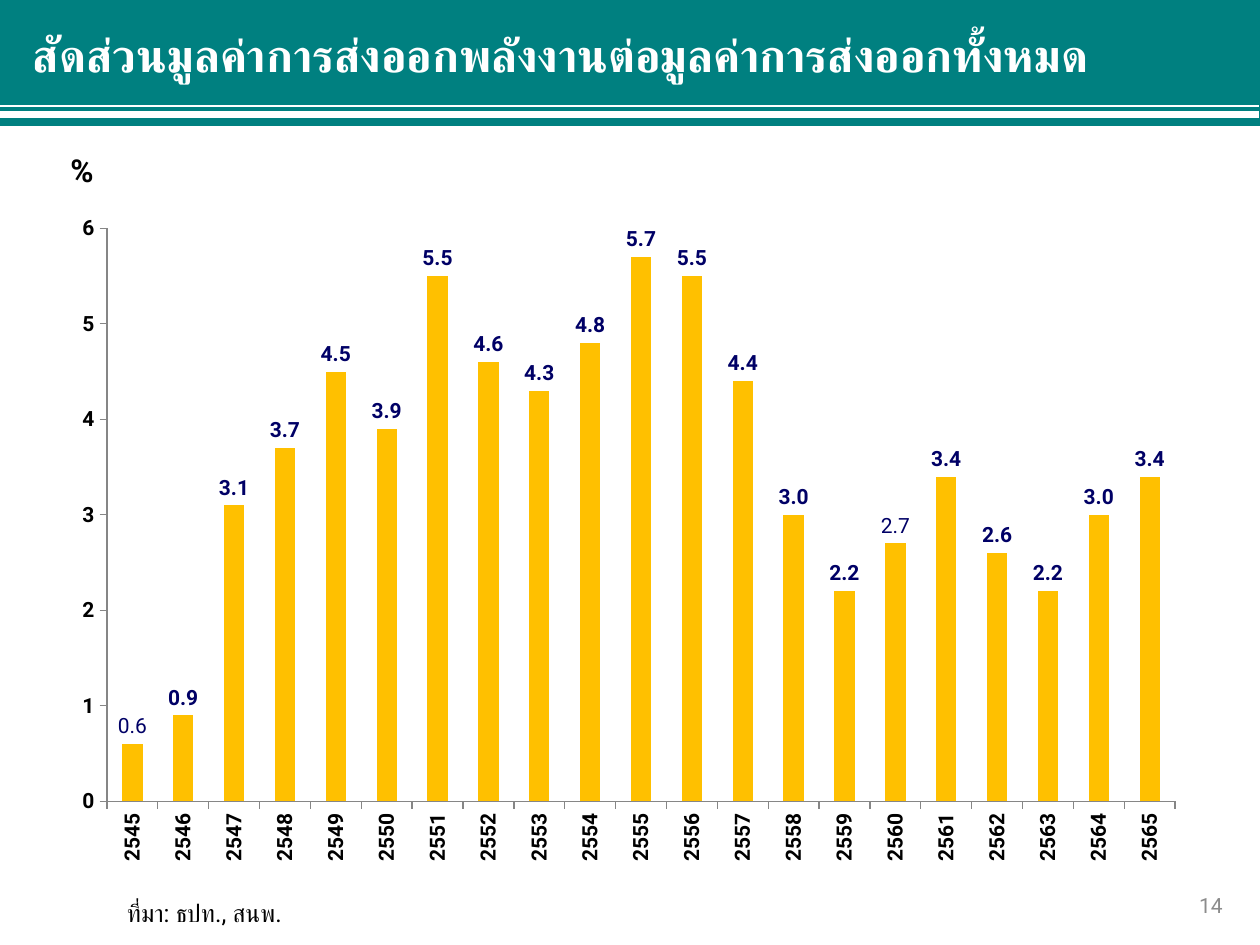
from dataclasses import dataclass

import lxml.etree
import pptx
import pptx.chart.data
import pptx.dml.color
import pptx.enum.chart
import pptx.enum.shapes
import pptx.enum.text
import pptx.oxml.ns
import pptx.util

Cm = pptx.util.Cm
Align = pptx.enum.text.PP_ALIGN
Anchor = pptx.enum.text.MSO_ANCHOR


@dataclass(frozen=True)
class Theme:
    font: str = "Roboto"
    teal: str = "008080"
    white: str = "FFFFFF"
    black: str = "000000"
    navy: str = "000066"
    amber: str = "FFC000"
    grey: str = "8C8C8C"
    axis: str = "868686"
    title_size: int = 26
    unit_size: int = 18
    source_size: int = 14
    small_size: int = 12


@dataclass(frozen=True)
class Frame:
    left: float
    top: float
    width: float
    height: float

    def lengths(self):
        return Cm(self.left), Cm(self.top), Cm(self.width), Cm(self.height)


@dataclass(frozen=True)
class Label:
    text: str
    frame: Frame
    size: int
    color: str
    bold: bool = False
    align: Align = Align.LEFT
    anchor: Anchor = Anchor.TOP
    wrap: bool = True


@dataclass(frozen=True)
class Stripe:
    top: float
    weight: float


THEME = Theme()
FIRST_YEAR = 2545
SHARES = (0.6, 0.9, 3.1, 3.7, 4.5, 3.9, 5.5, 4.6, 4.3, 4.8, 5.7,
          5.5, 4.4, 3.0, 2.2, 2.7, 3.4, 2.6, 2.2, 3.0, 3.4)
LIGHT_LABEL_YEARS = (2545, 2560)
CHART_FRAME = Frame(1.24, 4.06, 22.91, 13.59)
PLOT_LAYOUT = {"x": 0.04, "y": 0.04, "w": 0.94, "h": 0.85}
BANNER = Frame(-0.08, -0.1, 25.48, 2.64)
STRIPES = (Stripe(2.31, 3.75), Stripe(2.13, 1.25))
TITLE = Label("สัดส่วนมูลค่าการส่งออกพลังงานต่อมูลค่าการส่งออกทั้งหมด",
              Frame(0.41, 0.41, 25.2, 1.37), THEME.title_size, THEME.white, bold=True)
LABELS = (
    Label("%", Frame(0.41, 2.92, 2.49, 1.02), THEME.unit_size, THEME.black,
          bold=True, align=Align.CENTER),
    Label("ที่มา: ธปท., สนพ.", Frame(2.31, 17.98, 4.24, 0.86), THEME.source_size,
          THEME.black, wrap=False),
    Label("14", Frame(23.55, 17.78, 1.35, 0.94), THEME.small_size, THEME.grey,
          align=Align.RIGHT, anchor=Anchor.MIDDLE),
)


def rgb(color: str) -> pptx.dml.color.RGBColor:
    return pptx.dml.color.RGBColor.from_string(color)


def style_font(font, size: int, color: str, bold: bool) -> None:
    font.name = THEME.font
    font.size = pptx.util.Pt(size)
    font.bold = bold
    font.color.rgb = rgb(color)


def write_label(box, label: Label) -> None:
    box.left, box.top, box.width, box.height = label.frame.lengths()
    frame = box.text_frame
    frame.text = label.text
    frame.word_wrap = label.wrap
    frame.vertical_anchor = label.anchor
    para = frame.paragraphs[0]
    para.alignment = label.align
    for span in para.runs:
        style_font(span.font, label.size, label.color, label.bold)


def add_stripe(page, stripe: Stripe) -> None:
    line = page.shapes.add_connector(
        pptx.enum.shapes.MSO_CONNECTOR.STRAIGHT,
        Cm(BANNER.left), Cm(stripe.top), Cm(25.37), Cm(stripe.top))
    line.line.color.rgb = rgb(THEME.white)
    line.line.width = pptx.util.Pt(stripe.weight)
    properties = line.element.xpath("p:spPr")[0]
    lxml.etree.SubElement(properties, pptx.oxml.ns.qn("a:effectLst"))


def add_banner(page) -> None:
    banner = page.shapes.add_shape(
        pptx.enum.shapes.MSO_SHAPE.RECTANGLE, *BANNER.lengths())
    banner.shadow.inherit = False
    banner.fill.solid()
    banner.fill.fore_color.rgb = rgb(THEME.teal)
    banner.line.fill.background()
    for stripe in STRIPES:
        add_stripe(page, stripe)


def style_axis(axis) -> None:
    axis.has_major_gridlines = False
    axis.major_tick_mark = pptx.enum.chart.XL_TICK_MARK.OUTSIDE
    axis.minor_tick_mark = pptx.enum.chart.XL_TICK_MARK.NONE
    axis.format.line.color.rgb = rgb(THEME.axis)
    axis.format.line.width = pptx.util.Pt(0.75)
    style_font(axis.tick_labels.font, THEME.small_size, THEME.black, True)


def set_plot_layout(chart) -> None:
    qn = pptx.oxml.ns.qn
    area = chart.element.xpath("c:chart/c:plotArea")[0]
    for old in area.xpath("c:layout"):
        area.remove(old)
    layout = lxml.etree.Element(qn("c:layout"))
    manual = lxml.etree.SubElement(layout, qn("c:manualLayout"))
    settings = {"layoutTarget": "inner", "xMode": "edge", "yMode": "edge", **PLOT_LAYOUT}
    for name, value in settings.items():
        lxml.etree.SubElement(manual, qn(f"c:{name}")).set("val", str(value))
    area.insert(0, layout)


def add_share_chart(page) -> None:
    data = pptx.chart.data.CategoryChartData(number_format="#,##0.0")
    data.categories = [str(FIRST_YEAR + step) for step in range(len(SHARES))]
    data.add_series("Series 1", SHARES)
    chart = page.shapes.add_chart(
        pptx.enum.chart.XL_CHART_TYPE.COLUMN_CLUSTERED, *CHART_FRAME.lengths(), data).chart
    chart.has_legend = False
    chart.has_title = False
    style_font(chart.font, THEME.small_size, THEME.black, False)

    style_axis(chart.category_axis)
    style_axis(chart.value_axis)
    chart.element.xpath(".//c:catAx/c:txPr/a:bodyPr")[0].set("rot", "-5400000")
    chart.value_axis.minimum_scale = 0
    chart.value_axis.maximum_scale = 6
    chart.value_axis.major_unit = 1
    chart.value_axis.tick_labels.number_format = "#,##0"
    chart.value_axis.tick_labels.number_format_is_linked = False

    plot = chart.plots[0]
    plot.gap_width = 150
    plot.vary_by_categories = False
    series = plot.series[0]
    series.format.fill.solid()
    series.format.fill.fore_color.rgb = rgb(THEME.amber)
    outside = pptx.enum.chart.XL_LABEL_POSITION.OUTSIDE_END
    labels = series.data_labels
    labels.show_value = True
    labels.number_format = "#,##0.0"
    labels.number_format_is_linked = False
    labels.position = outside
    style_font(labels.font, THEME.small_size, THEME.navy, True)
    for year in LIGHT_LABEL_YEARS:
        label = series.points[year - FIRST_YEAR].data_label
        style_font(label.font, THEME.small_size, THEME.navy, False)
        label.position = outside
    set_plot_layout(chart)


def main() -> None:
    deck = pptx.Presentation()
    deck.slide_width, deck.slide_height = Cm(25.4), Cm(19.05)
    page = deck.slides.add_slide(deck.slide_layouts.get_by_name("Title Only"))
    add_share_chart(page)
    add_banner(page)
    title = page.shapes.title
    write_label(title, TITLE)
    title.element.getparent().append(title.element)
    for label in LABELS:
        write_label(page.shapes.add_textbox(*label.frame.lengths()), label)
    deck.save("out.pptx")


if __name__ == "__main__":
    main()
